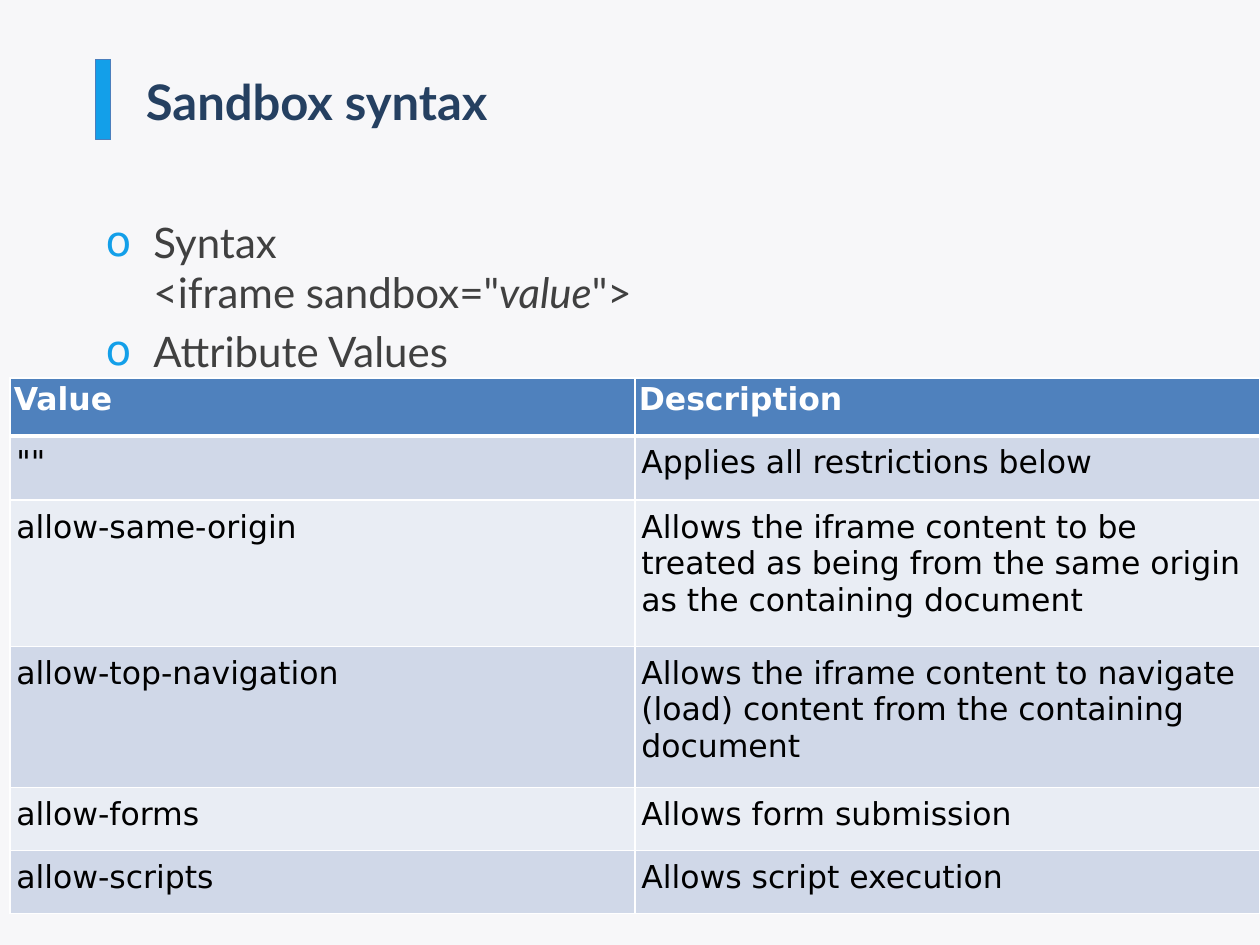
import pptx
import pptx.dml.color
import pptx.enum.shapes
import pptx.enum.text
import pptx.oxml
import pptx.oxml.ns
import pptx.util

WIDE, HIGH = 10, 7.5
SANS, LATO = "DejaVu Sans", "Lato"
BLUE = "139FE9"
ROWS = [
    ("Value", "Description"),
    ('""', "Applies all restrictions below"),
    ("allow-same-origin",
     "Allows the iframe content to be treated as being from the same "
     "origin as the containing document"),
    ("allow-top-navigation",
     "Allows the iframe content to navigate (load) content from the "
     "containing document"),
    ("allow-forms", "Allows form submission"),
    ("allow-scripts", "Allows script execution"),
]
TALL = [0.46, 0.51, 1.16, 1.12, 0.5, 0.5]


def color(code):
    return pptx.dml.color.RGBColor.from_string(code)


def place(*sizes):
    return [pptx.util.Inches(size) for size in sizes]


def style(para, name, size, code, bold=False):
    for run in para.runs:
        font = run.font
        font.name, font.size, font.bold = name, pptx.util.Pt(size), bold
        font.color.rgb = color(code)


def add_xml(node, text):
    space = pptx.oxml.ns.nsdecls("a")
    node.append(pptx.oxml.parse_xml(text.replace(">", f" {space}>", 1)))


def add_rect(slide, box, fill, line=None):
    kind = pptx.enum.shapes.MSO_SHAPE.RECTANGLE
    rect = slide.shapes.add_shape(kind, *place(*box))
    rect.shadow.inherit = False
    rect.fill.solid()
    rect.fill.fore_color.rgb = color(fill)
    if line:
        rect.line.color.rgb = color(line)
        rect.line.width = pptx.util.Pt(0.75)
    else:
        rect.line.fill.background()


def add_text(slide, box):
    frame = slide.shapes.add_textbox(*place(*box)).text_frame
    frame.word_wrap = True
    return frame


def add_title(slide, text):
    frame = add_text(slide, (1.06, 0.37, 8.16, 0.87))
    frame.vertical_anchor = pptx.enum.text.MSO_ANCHOR.MIDDLE
    frame.text = text
    style(frame.paragraphs[0], LATO, 28, "254061", True)


def bullet(para):
    props = para._p.get_or_add_pPr()
    indent = pptx.util.Inches(0.38)
    props.set("marL", str(indent))
    props.set("indent", str(-indent))
    add_xml(props, f'<a:buClr><a:srgbClr val="{BLUE}"/></a:buClr>')
    add_xml(props, f'<a:buFont typeface="{SANS}"></a:buFont>')
    add_xml(props, '<a:buChar char="o"></a:buChar>')


def add_body(slide):
    frame = add_text(slide, (0.74, 1.67, 8.76, 5.03))
    first, last = frame.paragraphs[0], frame.add_paragraph()
    first.text = 'Syntax\v<iframe sandbox="'
    for part in ("value", '">'):
        run = first.add_run()
        run.text = part
        run.font.italic = part == "value"
    last.text = "Attribute Values"
    for para in (first, last):
        bullet(para)
        style(para, LATO, 24, "404040")
    last.space_before = pptx.util.Pt(4.8)


def set_edges(cell, top, bottom):
    """Draw white cell borders, with top and bottom widths in points."""
    props = cell._tc.get_or_add_tcPr()
    for side, width in zip("LRTB", (1, 1, top, bottom)):
        add_xml(props, f'<a:ln{side} w="{pptx.util.Pt(width)}"><a:solidFill>'
                       f'<a:srgbClr val="FFFFFF"/></a:solidFill></a:ln{side}>')


def fill_cell(cell, text, row):
    head = row == 0
    set_edges(cell, 3 if row == 1 else 1, 3 if head else 1)
    cell.fill.solid()
    shade = "4F81BD" if head else ("E9EDF4", "D0D8E8")[row % 2]
    cell.fill.fore_color.rgb = color(shade)
    cell.margin_left, cell.margin_right = place(*[0.03 if head else 0.05] * 2)
    cell.margin_top, cell.margin_bottom = place(*[0.03 if head else 0.07] * 2)
    cell.text = text
    style(cell.text_frame.paragraphs[0], SANS, 18,
          "FFFFFF" if head else "000000", head)


def add_grid(slide):
    left = 0.08
    box = place(left, 3, WIDE - left, sum(TALL))
    grid = slide.shapes.add_table(len(ROWS), 2, *box).table
    for row, (texts, tall) in enumerate(zip(ROWS, TALL)):
        grid.rows[row].height = pptx.util.Inches(tall)
        for col, text in enumerate(texts):
            fill_cell(grid.cell(row, col), text, row)


def main():
    deck = pptx.Presentation()
    deck.slide_width, deck.slide_height = place(WIDE, HIGH)
    slide = deck.slides.add_slide(deck.slide_layouts[6])
    add_rect(slide, (0, 0, WIDE, HIGH), "F7F7F9")
    add_rect(slide, (0.76, 0.47, 0.12, 0.64), BLUE, "4B7EBC")
    add_title(slide, "Sandbox syntax")
    add_body(slide)
    add_grid(slide)
    deck.save("out.pptx")


if __name__ == "__main__":
    main()
